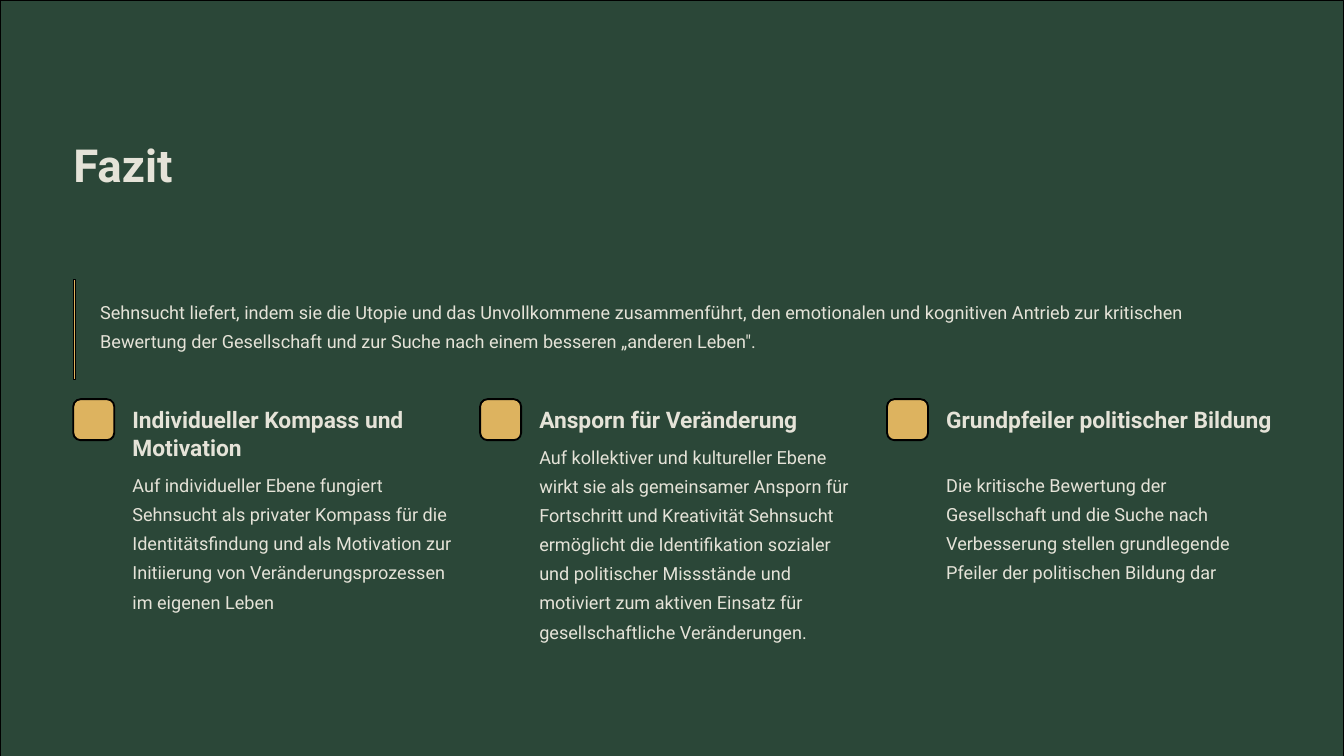
from pptx import Presentation
from pptx.dml.color import RGBColor
from pptx.enum.shapes import MSO_SHAPE
from pptx.enum.text import MSO_ANCHOR, MSO_AUTO_SIZE, PP_ALIGN
from pptx.util import Inches, Pt

RECTANGLE = MSO_SHAPE.RECTANGLE
ROUNDED = MSO_SHAPE.ROUNDED_RECTANGLE
TOP = MSO_ANCHOR.TOP
LEFT = PP_ALIGN.LEFT
GROW = MSO_AUTO_SIZE.SHAPE_TO_FIT_TEXT

GREEN, GOLD, CREAM, BLACK = "2B4738", "DDB35F", "E5E3D8", "000000"
WIDTH, HEIGHT = 20, 11.25

TITLE = "Fazit"
QUOTE = (
    "Sehnsucht liefert, indem sie die Utopie und das Unvollkommene zusammenführt, "
    "den emotionalen und kognitiven Antrieb zur kritischen Bewertung der Gesellschaft "
    "und zur Suche nach einem besseren „anderen Leben\"."
)
COLUMNS = [
    {
        "heading": "Individueller Kompass und Motivation",
        "heading_lines": 2,
        "heading_width": 4.84,
        "body": "Auf individueller Ebene fungiert Sehnsucht als privater Kompass für die "
                "Identitätsfindung und als Motivation zur Initiierung von "
                "Veränderungsprozessen im eigenen Leben",
        "body_lines": 5,
    },
    {
        "heading": "Ansporn für Veränderung",
        "heading_lines": 1,
        "heading_width": 3.99,
        "body": "Auf kollektiver und kultureller Ebene wirkt sie als gemeinsamer Ansporn für "
                "Fortschritt und Kreativität Sehnsucht ermöglicht die Identifikation sozialer "
                "und politischer Missstände und motiviert zum aktiven Einsatz für "
                "gesellschaftliche Veränderungen.",
        "body_lines": 7,
    },
    {
        "heading": "Grundpfeiler politischer Bildung",
        "heading_lines": 2,
        "heading_width": 4.84,
        "body": "Die kritische Bewertung der Gesellschaft und die Suche nach Verbesserung "
                "stellen grundlegende Pfeiler der politischen Bildung dar",
        "body_lines": 4,
    },
]

TITLE_STYLE = {"size": Pt(48.8), "bold": True}, Pt(60.6)
HEADING_STYLE = {"size": Pt(24.4), "bold": True}, Pt(30)
BODY_STYLE = {"size": Pt(19.4), "bold": False}, Pt(31.2)

MARGIN = 1.09
COLUMN_STEP = 6.055
TEXT_INDENT = 0.88
MARKER_TOP, MARKER_SIZE = 5.94, 0.61
HEADING_TOP, HEADING_LINE = 6.03, 0.4
BODY_TOP, BODY_OFFSET, BODY_LINE = 6.11, 0.42, 0.424
BODY_WIDTH = 4.84


def color(value):
    return RGBColor.from_string(value)


def place(shape, left, top, width, height):
    box = {"left": left, "top": top, "width": width, "height": height}
    for name, value in box.items():
        setattr(shape, name, Inches(value))


def write(shape, text, style):
    font_values, line_spacing = style
    frame = shape.text_frame
    frame_values = {
        "margin_left": 0, "margin_top": 0, "margin_right": 0, "margin_bottom": 0,
        "word_wrap": True, "vertical_anchor": TOP, "auto_size": GROW,
    }
    for name, value in frame_values.items():
        setattr(frame, name, value)
    frame.text = text
    paragraph = frame.paragraphs[0]
    paragraph_values = {"alignment": LEFT, "line_spacing": line_spacing, "space_before": Pt(0)}
    for name, value in paragraph_values.items():
        setattr(paragraph, name, value)
    font = paragraph.runs[0].font
    for name, value in {"name": "Roboto", **font_values}.items():
        setattr(font, name, value)
    font.color.rgb = color(CREAM)


def add_text(slide, text, style, *box):
    write(slide.shapes.add_textbox(*map(Inches, box)), text, style)


def add_block(slide, kind, fill, line_width, *box):
    shape = slide.shapes.add_shape(kind, *map(Inches, box))
    shape.shadow.inherit = False
    shape.fill.solid()
    shape.fill.fore_color.rgb = color(fill)
    shape.line.color.rgb = color(BLACK)
    shape.line.width = Pt(line_width)
    return shape


def add_column(slide, index, column):
    left = MARGIN + index * COLUMN_STEP
    text_left = left + TEXT_INDENT
    lines = column["heading_lines"]
    marker = add_block(slide, ROUNDED, GOLD, 2, left, MARKER_TOP, MARKER_SIZE, MARKER_SIZE)
    marker.adjustments[0] = 0.18
    add_text(slide, column["heading"], HEADING_STYLE,
             text_left, HEADING_TOP, column["heading_width"], lines * HEADING_LINE)
    add_text(slide, column["body"], BODY_STYLE,
             text_left, BODY_TOP + lines * BODY_OFFSET, BODY_WIDTH,
             column["body_lines"] * BODY_LINE)


def main():
    presentation = Presentation()
    presentation.slide_width = Inches(WIDTH)
    presentation.slide_height = Inches(HEIGHT)
    slide = presentation.slides.add_slide(presentation.slide_layouts.get_by_name("Title Only"))
    slide.background.fill.solid()
    slide.background.fill.fore_color.rgb = color(BLACK)

    title = slide.shapes.title
    place(title, MARGIN, 2.01, 1.51, 0.82)
    write(title, TITLE, TITLE_STYLE)

    panel = add_block(slide, RECTANGLE, GREEN, 1, 0, 0, WIDTH, HEIGHT)
    title.element.addprevious(panel.element)

    add_text(slide, QUOTE, BODY_STYLE, 1.49, 4.37, 17.42, 0.84)
    add_block(slide, RECTANGLE, GOLD, 1, MARGIN, 4.16, 0.03, 1.48)
    for index, column in enumerate(COLUMNS):
        add_column(slide, index, column)

    presentation.save("out.pptx")


if __name__ == "__main__":
    main()
